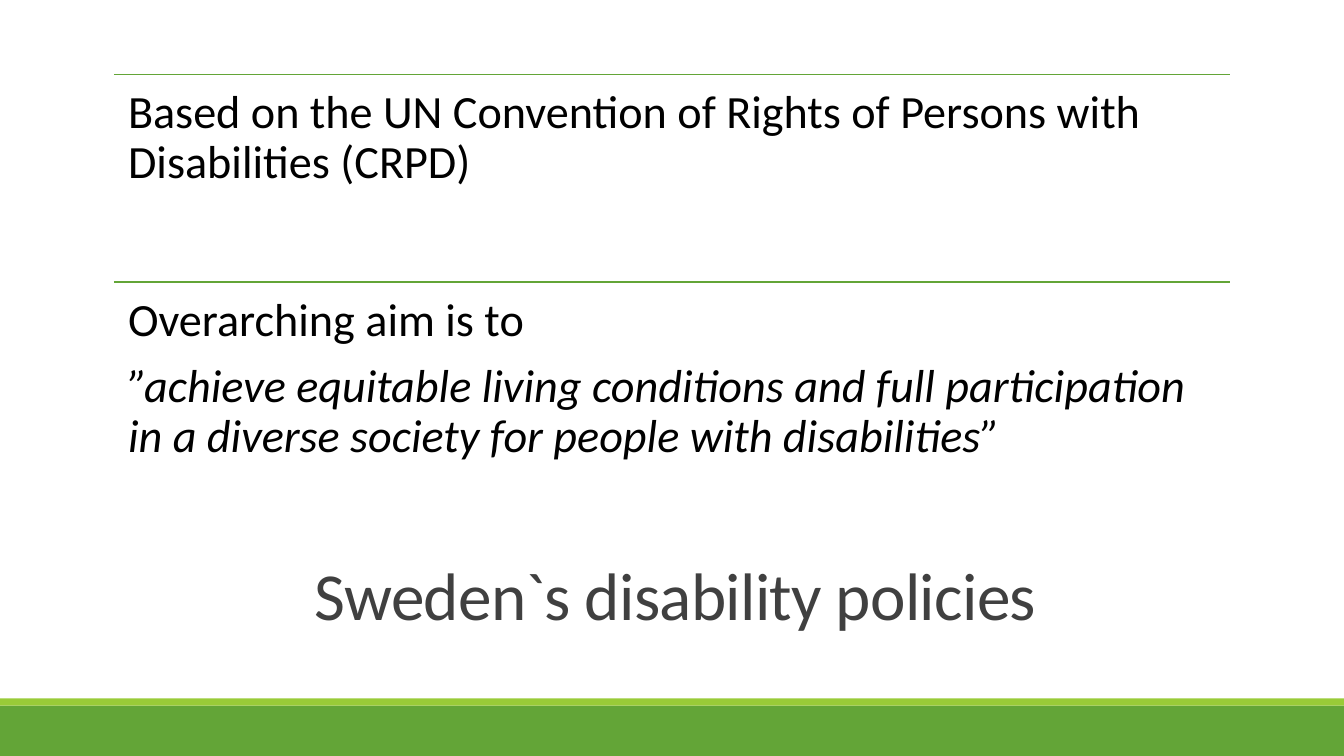
from lxml import etree
from pptx import Presentation
from pptx.dml.color import RGBColor
from pptx.enum.shapes import MSO_CONNECTOR, MSO_SHAPE
from pptx.enum.text import MSO_ANCHOR, MSO_AUTO_SIZE, PP_ALIGN
from pptx.oxml.ns import qn
from pptx.util import Inches, Pt

RECTANGLE = MSO_SHAPE.RECTANGLE
STRAIGHT = MSO_CONNECTOR.STRAIGHT
MIDDLE = MSO_ANCHOR.MIDDLE
TOP = MSO_ANCHOR.TOP
CENTER = PP_ALIGN.CENTER
LEFT = PP_ALIGN.LEFT
NO_AUTOFIT = MSO_AUTO_SIZE.NONE

GREEN = RGBColor(0x63, 0xA5, 0x37)
LIME = RGBColor(0x99, 0xCB, 0x38)
BLACK = RGBColor(0x00, 0x00, 0x00)
DARK_GRAY = RGBColor(0x40, 0x40, 0x40)

SLIDE_WIDTH = 13.33
SLIDE_HEIGHT = 7.5
TITLE_ONLY_LAYOUT = 5
POLICY_LEFT = 1.13
POLICY_TOP = 0.74
POLICY_WIDTH = 11.07
POLICY_HEIGHT = 2.06

POLICIES = [
    [("Based on the UN Convention of Rights of Persons with Disabilities (CRPD)", False)],
    [
        ("Overarching aim is to", False),
        ("”achieve equitable living conditions and full participation "
         "in a diverse society for people with disabilities”", True),
    ],
]


class PolicySlide:
    font_name = "Calibri"
    title_size = Pt(48)
    body_size = Pt(33)
    body_inset = Inches(0.14)
    body_gap = Pt(11.5)
    rule_width = Pt(1.25)

    def __init__(self, presentation):
        layout = presentation.slide_layouts[TITLE_ONLY_LAYOUT]
        self.slide = presentation.slides.add_slide(layout)

    def format_runs(self, paragraph, size, color, italic=False):
        for run in paragraph.runs:
            run.font.name = self.font_name
            run.font.size = size
            run.font.italic = italic
            run.font.color.rgb = color

    def add_band(self, top, height, color):
        band = self.slide.shapes.add_shape(
            RECTANGLE, 0, Inches(top), Inches(SLIDE_WIDTH), Inches(height))
        band.shadow.inherit = False
        band.fill.solid()
        band.fill.fore_color.rgb = color
        band.line.fill.background()

    def add_title(self, text, left, top, width, height):
        title = self.slide.shapes.title
        title.left, title.top = Inches(left), Inches(top)
        title.width, title.height = Inches(width), Inches(height)
        text_frame = title.text_frame
        text_frame.text = text
        text_frame.word_wrap = True
        text_frame.auto_size = NO_AUTOFIT
        text_frame.vertical_anchor = MIDDLE
        paragraph = text_frame.paragraphs[0]
        paragraph.alignment = CENTER
        paragraph.line_spacing = 0.85
        self.format_runs(paragraph, self.title_size, DARK_GRAY)
        for run in paragraph.runs:
            run.font._element.set("spc", "-50")

    def add_rule(self, left, top, width):
        rule = self.slide.shapes.add_connector(
            STRAIGHT, Inches(left), Inches(top), Inches(left + width), Inches(top))
        rule.line.color.rgb = GREEN
        rule.line.width = self.rule_width
        etree.SubElement(rule._element.spPr, qn("a:effectLst"))

    def add_body(self, passages, left, top, width, height):
        box = self.slide.shapes.add_textbox(
            Inches(left), Inches(top), Inches(width), Inches(height))
        text_frame = box.text_frame
        text_frame.word_wrap = True
        text_frame.vertical_anchor = TOP
        text_frame.margin_left = text_frame.margin_right = self.body_inset
        text_frame.margin_top = text_frame.margin_bottom = self.body_inset
        text_frame.text = "\n".join(text for text, italic in passages)
        for paragraph, (text, italic) in zip(text_frame.paragraphs, passages):
            paragraph.alignment = LEFT
            paragraph.line_spacing = 0.9
            paragraph.space_after = self.body_gap
            self.format_runs(paragraph, self.body_size, BLACK, italic)


def main():
    presentation = Presentation()
    presentation.slide_width = Inches(SLIDE_WIDTH)
    presentation.slide_height = Inches(SLIDE_HEIGHT)

    policy_slide = PolicySlide(presentation)
    policy_slide.add_band(7, 0.5, GREEN)
    policy_slide.add_band(6.93, 0.07, LIME)
    policy_slide.add_title("Sweden`s disability policies", 1.2, 5.3, 11, 1.3)
    for index, passages in enumerate(POLICIES):
        top = POLICY_TOP + index * POLICY_HEIGHT
        policy_slide.add_rule(POLICY_LEFT, top, POLICY_WIDTH)
        policy_slide.add_body(passages, POLICY_LEFT, top, POLICY_WIDTH, POLICY_HEIGHT)

    presentation.save("out.pptx")


if __name__ == "__main__":
    main()
